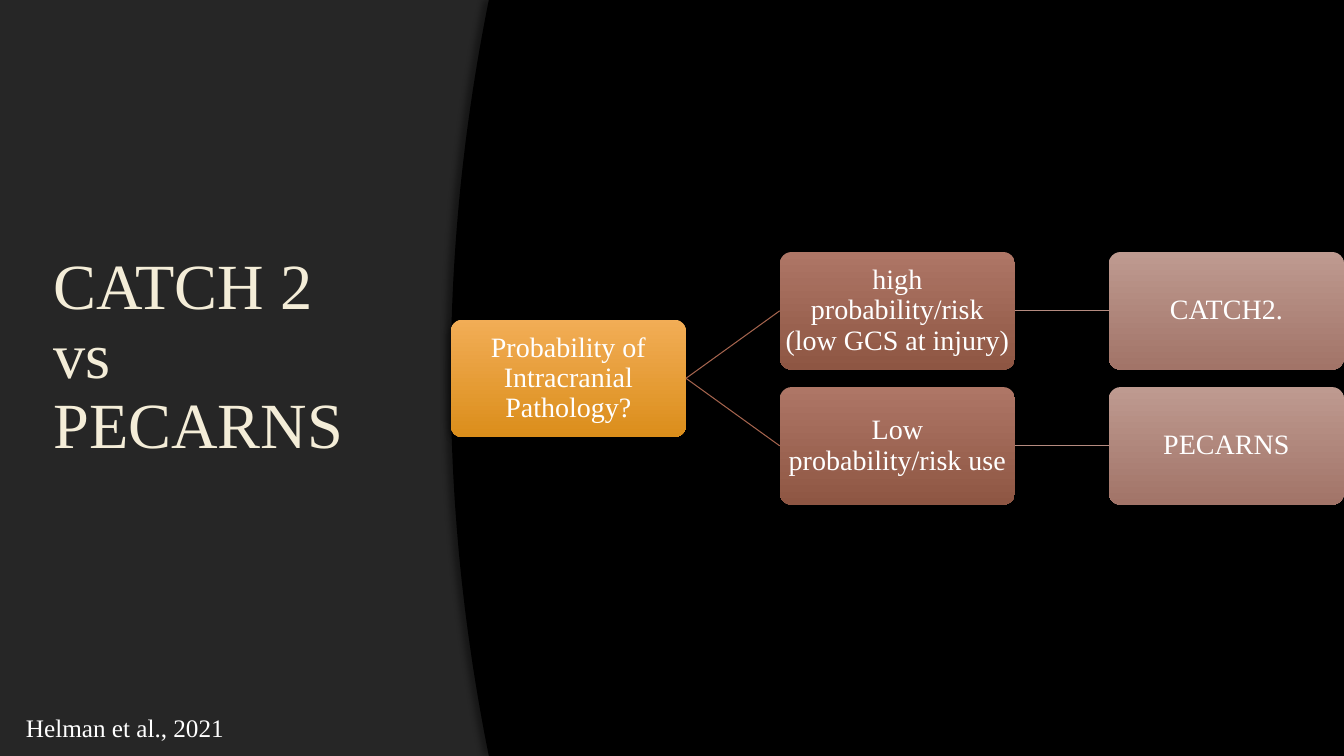
import pptx
import pptx.util
import pptx.dml.color
import pptx.enum.shapes
import pptx.enum.text
import pptx.oxml.ns
from lxml import etree

Pt = pptx.util.Pt
qn = pptx.oxml.ns.qn
SHAPE = pptx.enum.shapes.MSO_SHAPE
ALIGN = pptx.enum.text.PP_ALIGN
ANCHOR = pptx.enum.text.MSO_ANCHOR

COLORS = {
    "black": "000000", "panel": "262626", "title": "F4EDD8", "white": "FFFFFF",
    "amber": ("F2AD56", "DB8E1B"), "rust": ("AE7666", "8E5643"),
    "rose": ("BE9A90", "A27468"), "fork": "A5644E", "link": "B58B80",
}
WIDE, HIGH = 960, 540


def rgb(code):
    return pptx.dml.color.RGBColor.from_string(code)


def shade(effects, alpha, blur, dist, angle):
    """Put a black outer shadow in an effect list."""
    node = etree.SubElement(
        effects, qn("a:outerShdw"), blurRad=str(Pt(blur)), dist=str(Pt(dist)),
        dir=str(angle * 60000), algn="ctr", rotWithShape="0")
    color = etree.SubElement(node, qn("a:srgbClr"), val=COLORS["black"])
    etree.SubElement(color, qn("a:alpha"), val=str(alpha * 1000))


class Painter:
    font = "Times New Roman"

    def __init__(self, slide):
        self.slide = slide
        self.shapes = slide.shapes

    def back(self, color):
        fill = self.slide.background.fill
        fill.solid()
        fill.fore_color.rgb = rgb(COLORS[color])

    def plain(self, shape, color):
        shape.fill.solid()
        shape.fill.fore_color.rgb = rgb(COLORS[color])
        shape.line.fill.background()
        shape.shadow.inherit = False

    def panel(self, color):
        shape = self.shapes.add_shape(SHAPE.RECTANGLE, 0, 0, Pt(WIDE), Pt(HIGH))
        self.plain(shape, color)

    def curve(self, left, depth, color, steps=60):
        """Fill the right side of the slide, bulging left to a parabola."""
        edge = []
        for step in range(steps + 1):
            t = 1 - 2 * step / steps
            edge.append((Pt(left + depth * t * t), Pt(HIGH * (1 + t) / 2)))
        build = self.shapes.build_freeform(Pt(WIDE), 0, scale=1.0)
        build.add_line_segments([(Pt(WIDE), Pt(HIGH))] + edge, close=True)
        shape = build.convert_to_shape()
        self.plain(shape, color)
        shade(shape._element.spPr.find(qn("a:effectLst")), 40, 4, 3, 180)

    def label(self, frame, text, size, color, align, anchor, space):
        frame.word_wrap = True
        frame.vertical_anchor = anchor
        para = frame.paragraphs[0]
        para.text = text
        para.alignment = align
        para.line_spacing = space
        para.font.name = self.font
        para.font.size = Pt(size)
        para.font.color.rgb = rgb(COLORS[color])
        return para

    def text(self, box, text, size, color, anchor=ANCHOR.TOP, space=1.0, glow=False):
        frame = self.shapes.add_textbox(*map(Pt, box)).text_frame
        para = self.label(frame, text, size, color, ALIGN.LEFT, anchor, space)
        if glow:
            effects = etree.Element(qn("a:effectLst"))
            shade(effects, 60, 3, 2, 45)
            para._p.find(".//" + qn("a:solidFill")).addnext(effects)

    def card(self, x, y, text, color):
        shape = self.shapes.add_shape(
            SHAPE.ROUNDED_RECTANGLE, Pt(x), Pt(y), Pt(168), Pt(84))
        shape.adjustments[0] = 0.1
        shape.fill.gradient()
        shape.fill.gradient_angle = 270
        for stop, code in zip(shape.fill.gradient_stops, COLORS[color]):
            stop.color.rgb = rgb(code)
        shape.line.fill.background()
        shape.shadow.inherit = False
        shade(shape._element.spPr.find(qn("a:effectLst")), 60, 5, 2, 90)
        frame = shape.text_frame
        frame.margin_left = frame.margin_right = Pt(0.75)
        frame.margin_top = frame.margin_bottom = Pt(0.75)
        self.label(frame, text, 20, "white", ALIGN.CENTER, ANCHOR.MIDDLE, 0.9)
        return shape

    def join(self, start, end, color):
        line = self.shapes.add_connector(
            pptx.enum.shapes.MSO_CONNECTOR.STRAIGHT, 0, 0, 0, 0)
        line.begin_connect(start, 3)
        line.end_connect(end, 1)
        line.line.color.rgb = rgb(COLORS[color])
        line.line.width = Pt(0.75)
        etree.SubElement(line._element.spPr, qn("a:effectLst"))


def main():
    deck = pptx.Presentation()
    deck.slide_width, deck.slide_height = Pt(WIDE), Pt(HIGH)
    art = Painter(deck.slides.add_slide(deck.slide_layouts[6]))

    # Backdrop and title
    art.back("black")
    art.panel("panel")
    art.text((31, 48, 261.5, 415.5), "CATCH 2\vvs\vPECARNS", 46, "title",
             ANCHOR.MIDDLE, 0.9, glow=True)
    art.curve(322, 27.2, "black")

    # Decision tree: one root, two branches with a result each
    left, top, across, down = 322, 180, 235, 96.5
    root = art.card(left, top + down / 2,
                    "Probability of Intracranial Pathology?", "amber")
    tree = [
        ("high probability/risk (low GCS at injury)", "CATCH2."),
        ("Low probability/risk use", "PECARNS"),
    ]
    for row, (risk, rule) in enumerate(tree):
        y = top + row * down
        branch = art.card(left + across, y, risk, "rust")
        leaf = art.card(left + 2 * across, y, rule, "rose")
        art.join(root, branch, "fork")
        art.join(branch, leaf, "link")

    # Source
    art.text((11.5, 505, 1068.5, 29), "Helman et al., 2021", 18, "white")

    deck.save("out.pptx")


if __name__ == "__main__":
    main()
